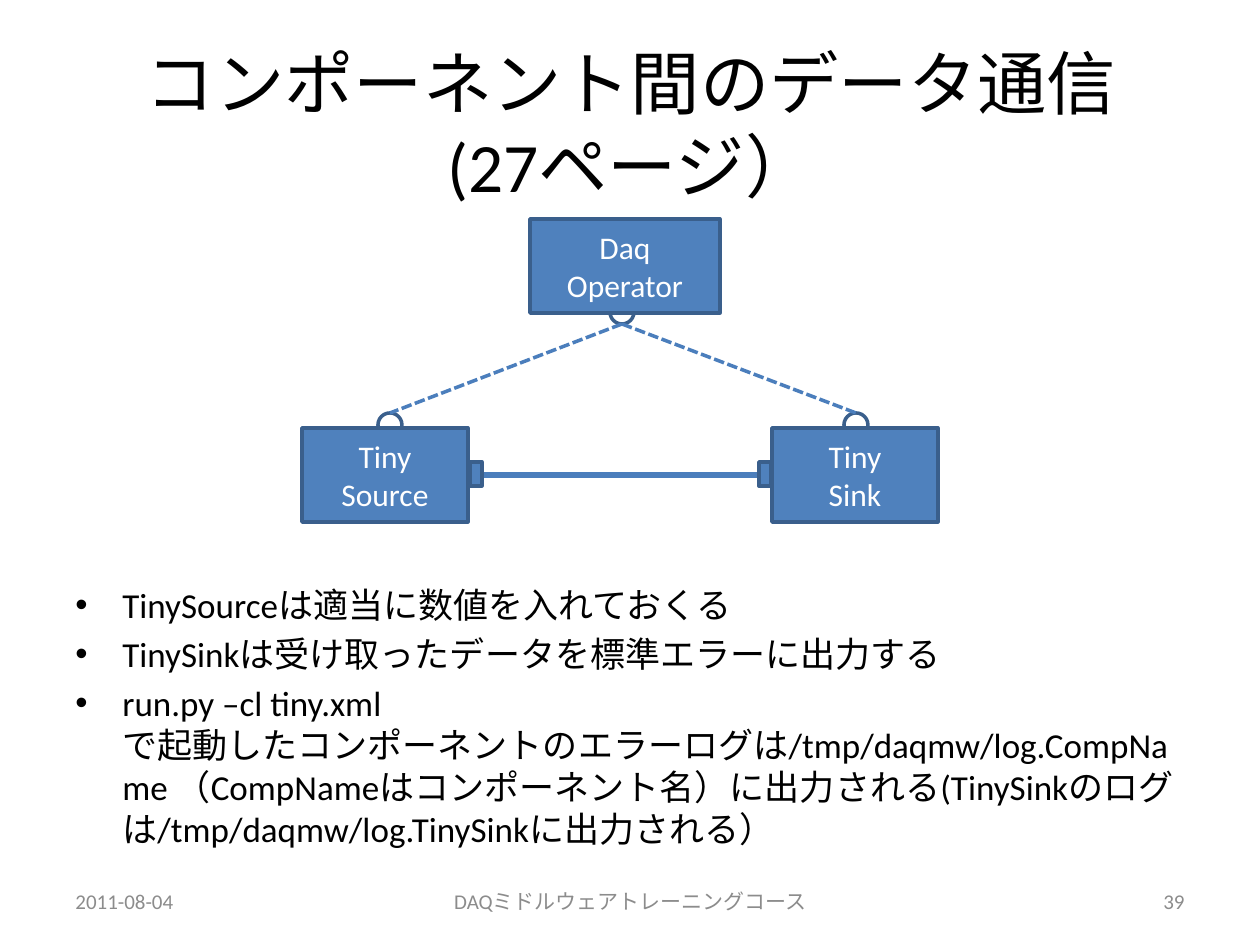
from lxml import etree
from pptx import Presentation
from pptx.dml.color import RGBColor
from pptx.enum.dml import MSO_LINE
from pptx.enum.shapes import MSO_CONNECTOR, MSO_SHAPE
from pptx.enum.text import MSO_ANCHOR, PP_ALIGN
from pptx.oxml.ns import qn
from pptx.util import Emu, Pt

PX = 914400 // 126
FONT = "Calibri"
BLACK = RGBColor(0x00, 0x00, 0x00)
WHITE = RGBColor(0xFF, 0xFF, 0xFF)
GREY = RGBColor(0x8C, 0x8C, 0x8C)
BLUE = RGBColor(0x4F, 0x81, 0xBD)
OUTLINE = RGBColor(0x3A, 0x5F, 0x8C)
LINK = RGBColor(0x4B, 0x7E, 0xBC)

LEFT, CENTER, RIGHT = PP_ALIGN.LEFT, PP_ALIGN.CENTER, PP_ALIGN.RIGHT
TOP, MIDDLE = MSO_ANCHOR.TOP, MSO_ANCHOR.MIDDLE
RECT, OVAL = MSO_SHAPE.RECTANGLE, MSO_SHAPE.OVAL
STRAIGHT = MSO_CONNECTOR.STRAIGHT
DASH = MSO_LINE.SQUARE_DOT
SIDE_LEFT, SIDE_RIGHT = 1, 3

LUG = 24  # diameter of a service port
PORT_W, PORT_H = 12, 24  # data port
INDENT = 47

BULLETS = [
    "TinySourceは適当に数値を入れておくる",
    "TinySinkは受け取ったデータを標準エラーに出力する",
    "run.py –cl tiny.xml\vで起動したコンポーネントのエラーログは/tmp/daqmw/log.CompName "
    "（CompNameはコンポーネント名）に出力される(TinySinkのログは/tmp/daqmw/log.TinySinkに出力される）",
]
FOOTERS = [
    (63, 294, "2011-08-04", LEFT),
    (431, 399, "DAQミドルウェアトレーニングコース", CENTER),
    (903, 294, "39", RIGHT),
]


def px(n):
    return Emu(n * PX)


def add_bullet(p):
    pPr = p._p.get_or_add_pPr()
    pPr.set("marL", str(px(INDENT)))
    pPr.set("indent", str(-px(INDENT)))
    etree.SubElement(pPr, qn("a:buFont"), typeface="Arial")
    etree.SubElement(pPr, qn("a:buChar"), char="•")


def write(sp, paragraphs, size=18, color=BLACK, align=LEFT, anchor=MIDDLE,
          bullets=False, space=0):
    tf = sp.text_frame
    tf.word_wrap = True
    tf.vertical_anchor = anchor
    for i, text in enumerate(paragraphs):
        p = tf.paragraphs[0] if i == 0 else tf.add_paragraph()
        p.text = text
        p.alignment = align
        p.space_before = Pt(space)
        if bullets:
            add_bullet(p)
        for r in p.runs:
            r.font.name = FONT
            r.font.size = Pt(size)
            r.font.color.rgb = color


def add_text(s, x, y, w, h, paragraphs, **fmt):
    sp = s.shapes.add_textbox(px(x), px(y), px(w), px(h))
    write(sp, paragraphs, **fmt)
    return sp


def add_box(s, kind, x, y, w, h, fill=BLUE, paragraphs=()):
    sp = s.shapes.add_shape(kind, px(x), px(y), px(w), px(h))
    sp.shadow.inherit = False
    sp.fill.solid()
    sp.fill.fore_color.rgb = fill
    sp.line.color.rgb = OUTLINE
    sp.line.width = Pt(2)
    write(sp, paragraphs, color=WHITE, align=CENTER)
    return sp


def add_line(s, x1, y1, x2, y2, width=2, dash=None):
    cn = s.shapes.add_connector(STRAIGHT, px(x1), px(y1), px(x2), px(y2))
    cn.line.color.rgb = LINK
    cn.line.width = Pt(width)
    if dash is not None:
        cn.line.dash_style = dash
    etree.SubElement(cn._element.spPr, qn("a:effectLst"))
    return cn


def add_diagram(s):
    # Service ports, partly hidden by the components
    hub_x, hub_y = 622, 324
    ends = [(390, 413), (856, 413)]
    for x, y in [(hub_x, hub_y - LUG)] + ends:
        add_box(s, OVAL, x - LUG // 2, y, LUG, LUG, fill=WHITE)

    # Components
    source = add_box(s, RECT, 302, 428, 166, 94, paragraphs=["Tiny", "Source"])
    sink = add_box(s, RECT, 772, 428, 166, 94, paragraphs=["Tiny", "Sink"])
    add_box(s, RECT, 530, 219, 190, 94, paragraphs=["Daq Operator"])

    # Data path and control paths
    data = add_line(s, 468, 475, 772, 475, width=3)
    data.begin_connect(source, SIDE_RIGHT)
    data.end_connect(sink, SIDE_LEFT)
    for x, y in ends:
        add_line(s, hub_x, hub_y, x, y, dash=DASH)

    # Data ports
    for x in (470, 759):
        add_box(s, RECT, x, 462, PORT_W, PORT_H)


def main():
    prs = Presentation()
    prs.slide_width, prs.slide_height = px(1260), px(945)
    s = prs.slides.add_slide(prs.slide_layouts[6])

    # Title, raised by its bottom inset
    title = add_text(s, 64, 86, 1134, 158, ["コンポーネント間のデータ通信\v(27ページ）"],
                     size=39.6, align=CENTER)
    title.text_frame.margin_bottom = px(89)

    # Body
    add_text(s, 63, 577, 1134, 242, BULLETS, size=20, anchor=TOP,
             bullets=True, space=4)

    # Footer
    for x, w, text, align in FOOTERS:
        add_text(s, x, 876, w, 50, [text], size=12, color=GREY, align=align)

    add_diagram(s)
    prs.save("out.pptx")


if __name__ == "__main__":
    main()
